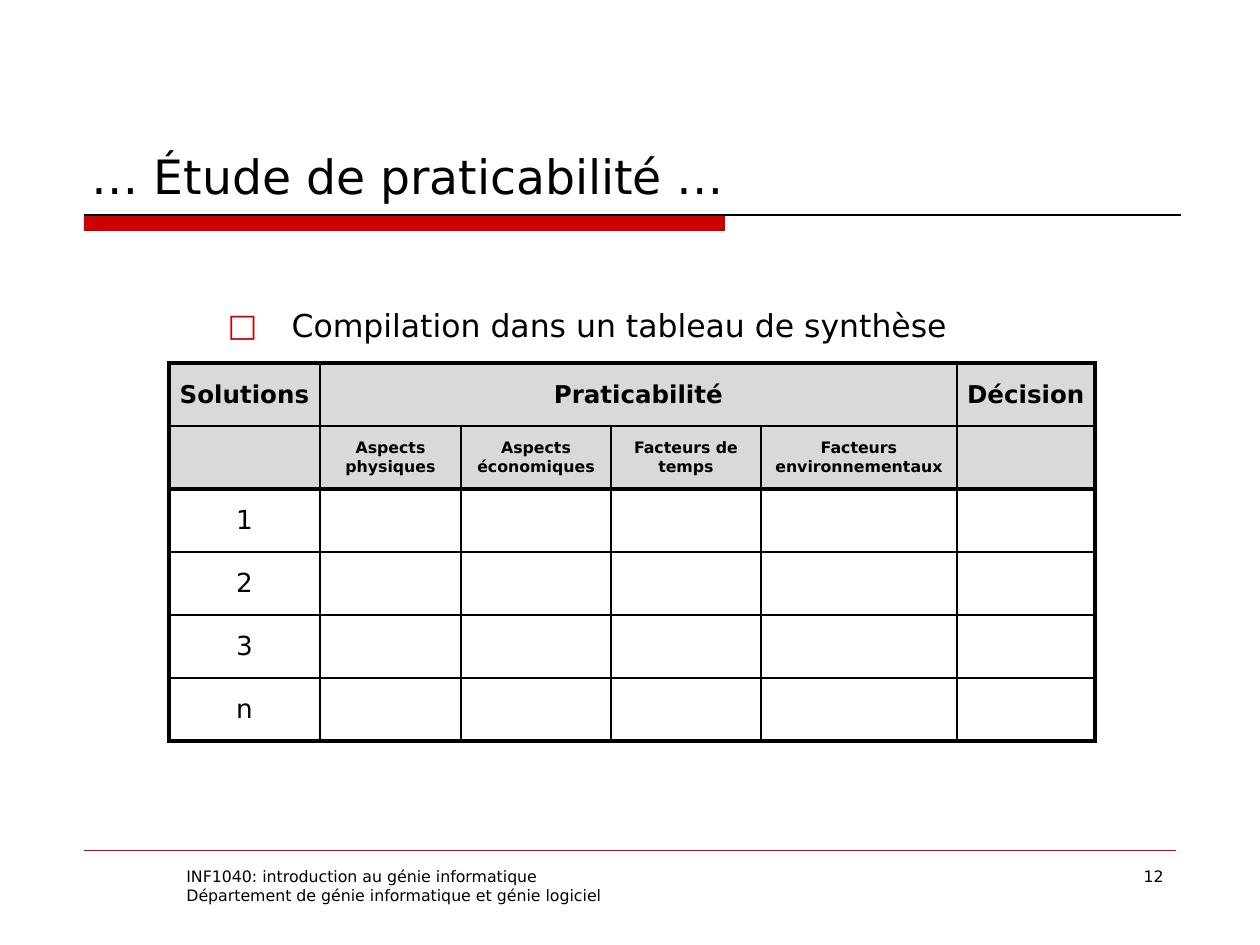
from lxml import etree
from pptx import Presentation
from pptx.dml.color import RGBColor
from pptx.enum.shapes import MSO_CONNECTOR, MSO_SHAPE
from pptx.enum.text import MSO_ANCHOR, MSO_AUTO_SIZE, PP_ALIGN
from pptx.oxml.ns import qn
from pptx.util import Pt

PX = 914400 / 126
FONT = "DejaVu Sans"
LEFT, CENTER, RIGHT = PP_ALIGN.LEFT, PP_ALIGN.CENTER, PP_ALIGN.RIGHT
TOP, MIDDLE, BOTTOM = MSO_ANCHOR.TOP, MSO_ANCHOR.MIDDLE, MSO_ANCHOR.BOTTOM
RED, BLACK, GREY = "CC0000", "000000", "D9D9D9"


def px(*values):
    """Convert pixel lengths to EMU."""
    return [round(v * PX) for v in values]


def write(tf, text, size, bold=False, align=LEFT, anchor=TOP):
    tf.word_wrap = True
    tf.vertical_anchor = anchor
    tf.text = text
    for p in tf.paragraphs:
        p.alignment = align
        p.space_before = Pt(0)
        for r in p.runs:
            r.font.name, r.font.size, r.font.bold = FONT, Pt(size), bold
            r.font.color.rgb = RGBColor.from_string(BLACK)


prs = Presentation()
prs.slide_width, prs.slide_height = px(1260, 945)
s = prs.slides.add_slide(prs.slide_layouts[1])

# Title and bullet
title, body = s.shapes.title, s.placeholders[1]
title.left, title.top, title.width, title.height = px(79, 42, 1103, 168)
write(title.text_frame, "… Étude de praticabilité …", 27, anchor=BOTTOM)
body.left, body.top, body.width, body.height = px(215, 300, 827, 39)
write(body.text_frame, "Compilation dans un tableau de synthèse", 18)
for sp in (title, body):
    sp.text_frame.auto_size = MSO_AUTO_SIZE.NONE

pPr = body.text_frame.paragraphs[0]._p.get_or_add_pPr()
indent = px(64)[0]
pPr.set("marL", str(indent))
pPr.set("indent", str(-indent))
color = etree.SubElement(pPr, qn("a:buClr"))
etree.SubElement(color, qn("a:srgbClr"), val=RED)
etree.SubElement(pPr, qn("a:buFont"), typeface=FONT)
etree.SubElement(pPr, qn("a:buChar"), char="□")

# Title bar and rules
bar = s.shapes.add_shape(MSO_SHAPE.RECTANGLE, *px(84, 215, 641, 16))
bar.shadow.inherit = False
bar.fill.solid()
bar.fill.fore_color.rgb = RGBColor.from_string(RED)
bar.line.fill.background()
for x2, y, line_color, width in [(1181, 215, BLACK, 0.75), (1176, 850, RED, 0.25)]:
    rule = s.shapes.add_connector(MSO_CONNECTOR.STRAIGHT, *px(84, y, x2, y))
    rule.line.color.rgb = RGBColor.from_string(line_color)
    rule.line.width = Pt(width)
    etree.SubElement(rule._element.spPr, qn("a:effectLst"))

# Summary table
rows = [
    ["Solutions", "Praticabilité", "", "", "", "Décision"],
    ["", "Aspects physiques", "Aspects économiques", "Facteurs de temps",
     "Facteurs environnementaux", ""],
    *[[label, "", "", "", "", ""] for label in "123n"],
]
sizes = [14, 9, 15, 15, 15, 15]
col_widths = [151, 141, 150, 150, 196, 138]
last_row, last_col = len(rows) - 1, len(col_widths) - 1
table = s.shapes.add_table(len(rows), len(col_widths), *px(169, 363, 926, 378)).table
table.first_row = table.horz_banding = False
for column, width in zip(table.columns, px(*col_widths)):
    column.width = width
for i, row in enumerate(rows):
    header = i < 2
    for j, text in enumerate(row):
        cell = table.cell(i, j)
        cell.margin_left, cell.margin_right = px(9, 9)
        cell.margin_top, cell.margin_bottom = px(5, 5)
        cell.vertical_anchor = MIDDLE
        if text:
            write(cell.text_frame, text, sizes[i], bold=header, align=CENTER, anchor=MIDDLE)
        borders = {
            "lnL": 2.25 if j == 0 else 1,
            "lnR": 2.25 if j == last_col else 1,
            "lnT": {0: 2.25, 2: 3}.get(i, 1),
            "lnB": {1: 3, last_row: 2.25}.get(i, 1),
        }
        tcPr = cell._tc.get_or_add_tcPr()
        for side, width in borders.items():
            ln = etree.SubElement(tcPr, qn(f"a:{side}"), w=str(Pt(width)))
            fill = etree.SubElement(ln, qn("a:solidFill"))
            etree.SubElement(fill, qn("a:srgbClr"), val=BLACK)
        if header:
            cell.fill.solid()
            cell.fill.fore_color.rgb = RGBColor.from_string(GREY)
        else:
            cell.fill.background()
table.cell(0, 1).merge(table.cell(0, 4))

# Footer
course = "INF1040: introduction au génie informatique\nDépartement de génie informatique et génie logiciel"
for text, x, width, align in [(course, 174, 656, LEFT), ("12", 903, 273, RIGHT)]:
    box = s.shapes.add_textbox(*px(x, 861, width, 63))
    write(box.text_frame, text, 9, align=align)

prs.save("out.pptx")
